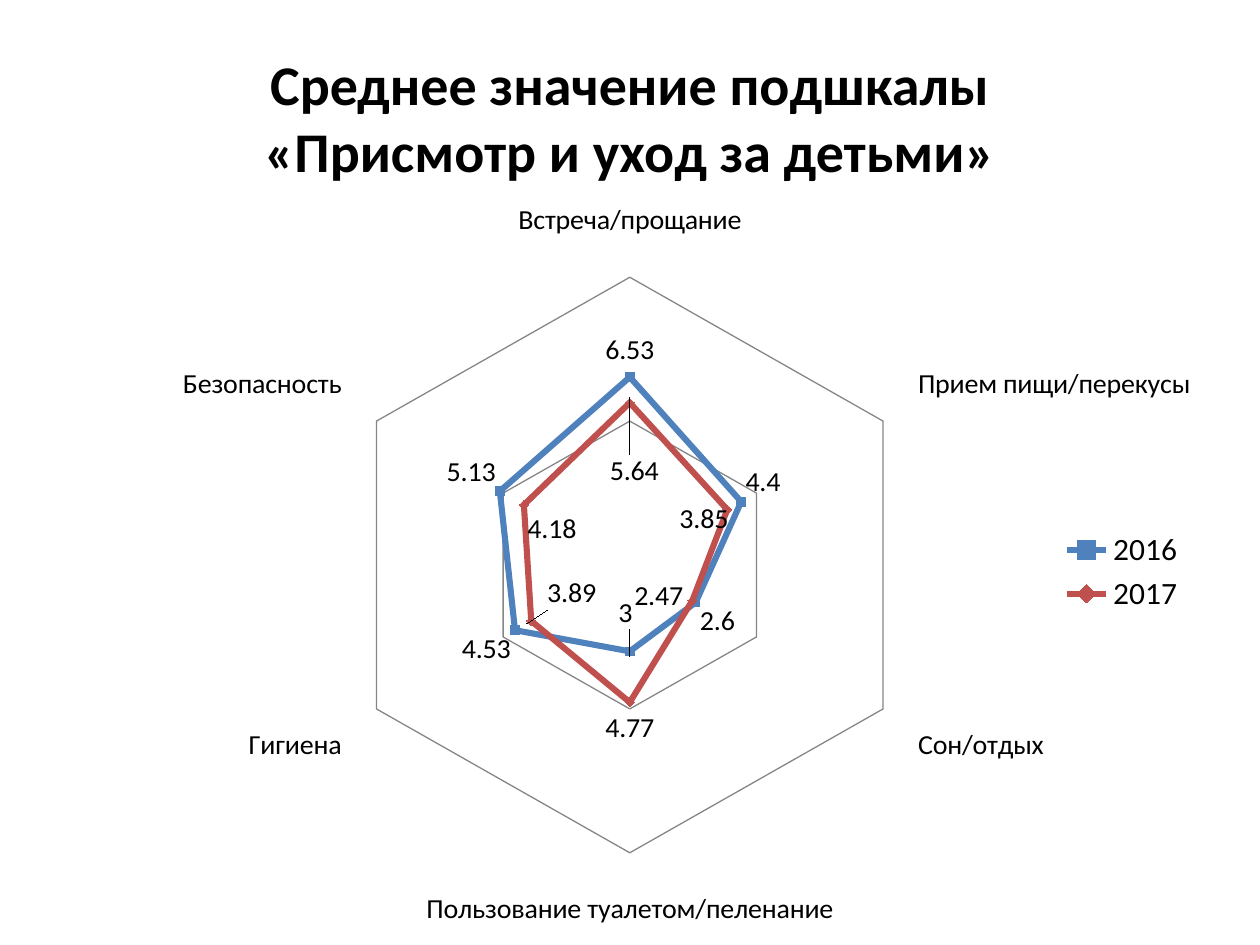
import pptx
import pptx.util
import pptx.chart.data
import pptx.dml.color
import pptx.enum.chart
import pptx.enum.text
import pptx.oxml

PX = 914400 // 126  # EMU in one px
FONT = "Calibri"
COLORS = {"text": "000000", "grid": "868686", "2016": "4F81BD", "2017": "C0504D"}

CATEGORIES = ["Встреча/прощание", "Прием пищи/перекусы", "Сон/отдых",
              "Пользование туалетом/пеленание", "Гигиена", "Безопасность"]
MARKERS = pptx.enum.chart.XL_MARKER_STYLE
# name, marker, values, label shifts in px by point
SERIES = [
    ("2016", MARKERS.SQUARE, [6.53, 4.4, 2.6, 3, 4.53, 5.13], {3: (-5, -66)}),
    ("2017", MARKERS.DIAMOND, [5.64, 3.85, 2.47, 4.77, 3.89, 4.18],
     {0: (4, 97), 1: (-52, 30), 2: (-62, -23), 4: (69, -48), 5: (57, 45)}),
]


def rgb(name):
    return pptx.dml.color.RGBColor.from_string(COLORS[name])


def set_font(font, size, bold=False):
    font.name = FONT
    font.size = pptx.util.Pt(size)
    font.bold = bold
    font.color.rgb = rgb("text")


def set_line(line, color, width):
    line.color.rgb = rgb(color)
    line.width = pptx.util.Pt(width)


def manual_layout(x, y, w=None, h=None):
    """Chart layout element: a shift, or an inner plot box if a size is given."""
    ns = 'xmlns:c="http://schemas.openxmlformats.org/drawingml/2006/chart"'
    if w is None:
        parts = [("x", x), ("y", y)]
    else:
        parts = [("layoutTarget", "inner"), ("xMode", "edge"), ("yMode", "edge"),
                 ("x", x), ("y", y), ("w", w), ("h", h)]
    body = "".join(f'<c:{tag} val="{val}"/>' for tag, val in parts)
    return pptx.oxml.parse_xml(
        f"<c:layout {ns}><c:manualLayout>{body}</c:manualLayout></c:layout>")


def add_title(slide, x, y, w, h):
    tb = slide.shapes.add_textbox(x * PX, y * PX, w * PX, h * PX)
    tf = tb.text_frame
    tf.word_wrap = True
    tf.vertical_anchor = pptx.enum.text.MSO_ANCHOR.MIDDLE
    tf.text = "Среднее значение подшкалы\v«Присмотр и уход за детьми»"
    p = tf.paragraphs[0]
    p.alignment = pptx.enum.text.PP_ALIGN.CENTER
    for r in p.runs:
        set_font(r.font, 32, bold=True)


def style_series(series, marker, shifts, w, h):
    series.smooth = False
    color = series.name
    set_line(series.format.line, color, 3.5)
    series.marker.style = marker
    series.marker.size = 5
    series.marker.format.fill.solid()
    series.marker.format.fill.fore_color.rgb = rgb(color)
    set_line(series.marker.format.line, color, 0.75)

    # Value labels, some moved away from their points
    labels = series.data_labels
    labels.show_value = True
    set_font(labels.font, 16)
    for i, (dx, dy) in shifts.items():
        set_font(series.points[i].data_label.font, 16)
        idx = labels._element.xpath(f"c:dLbl/c:idx[@val='{i}']")[0]
        idx.addnext(manual_layout(round(dx / w, 3), round(dy / h, 3)))


def add_radar(slide, x, y, w, h):
    data = pptx.chart.data.CategoryChartData()
    data.categories = CATEGORIES
    for name, _, values, _ in SERIES:
        data.add_series(name, values)
    chart = slide.shapes.add_chart(
        pptx.enum.chart.XL_CHART_TYPE.RADAR_MARKERS,
        x * PX, y * PX, w * PX, h * PX, data).chart
    set_font(chart.font, 18)
    chart.has_title = False
    plot = chart.plots[0]
    plot.vary_by_categories = False

    # Plot box
    area = chart._chartSpace.chart.plotArea
    for old in area.xpath("c:layout"):
        area.remove(old)
    area.insert(0, manual_layout(0.241, 0.072, 0.516, 0.837))

    # Axes
    set_font(chart.category_axis.tick_labels.font, 16)
    chart.category_axis.has_major_gridlines = True
    axis = chart.value_axis
    axis.minimum_scale, axis.maximum_scale, axis.major_unit = 0, 10, 5
    axis.has_major_gridlines = True
    set_line(axis.major_gridlines.format.line, "grid", 0.75)
    axis.visible = False

    # Legend
    chart.has_legend = True
    chart.legend.position = pptx.enum.chart.XL_LEGEND_POSITION.RIGHT
    chart.legend.include_in_layout = False
    set_font(chart.legend.font, 18)

    for series, (_, marker, _, shifts) in zip(plot.series, SERIES):
        style_series(series, marker, shifts, w, h)


def main():
    prs = pptx.Presentation()
    prs.slide_width, prs.slide_height = 1260 * PX, 945 * PX
    s = prs.slides.add_slide(prs.slide_layouts[6])
    add_title(s, 63, 38, 1134, 157)
    add_radar(s, 64, 204, 1134, 724)
    prs.save("out.pptx")


if __name__ == "__main__":
    main()
